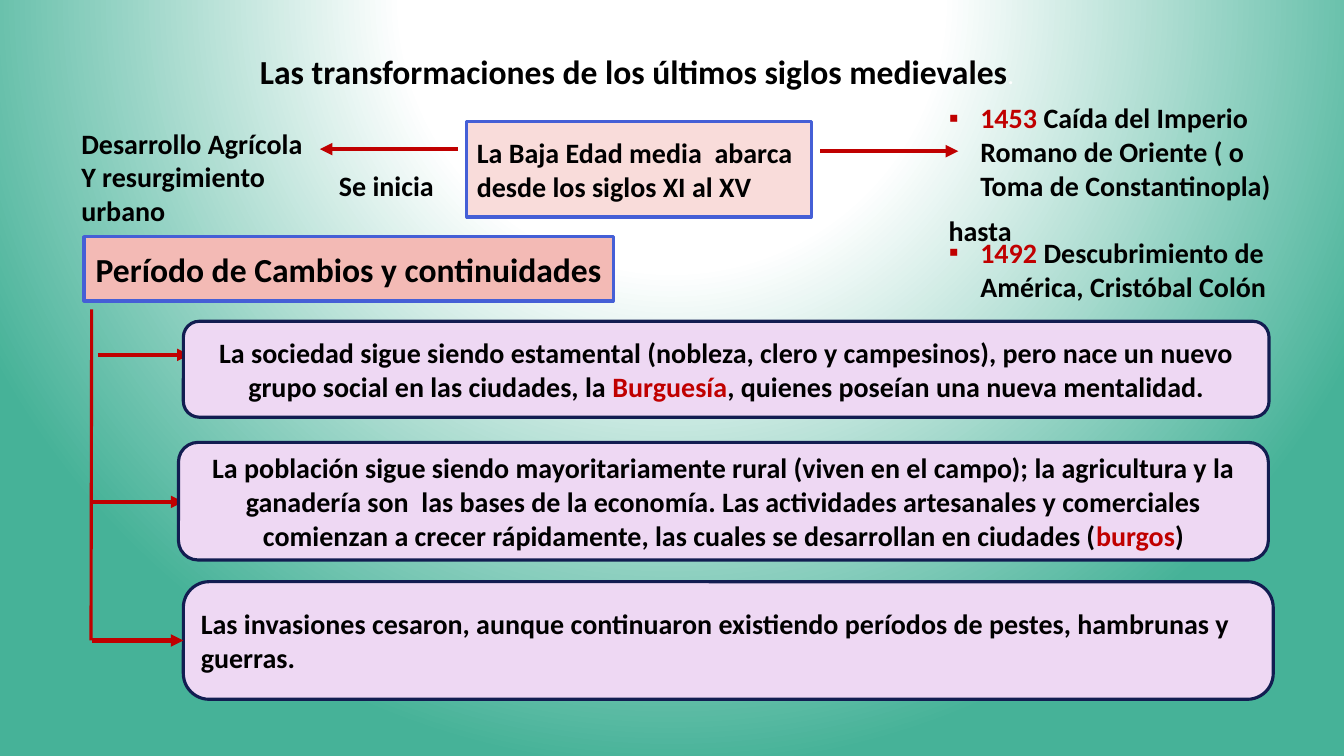
from lxml.etree import SubElement
from pptx import Presentation
from pptx.dml.color import RGBColor
from pptx.enum.shapes import MSO_CONNECTOR, MSO_SHAPE
from pptx.enum.text import MSO_ANCHOR, MSO_AUTO_SIZE, PP_ALIGN
from pptx.oxml.ns import qn
from pptx.util import Pt

BLACK, RED, WHITE = "000000", "C00000", "FFFFFF"
BLUE, NAVY, LILAC = "455FD6", "121D51", "EED8F3"


def colour(value):
    return RGBColor.from_string(value)


def add_span(para, text, ink=BLACK, size=20, bold=True):
    span = para.add_run()
    span.text = text
    span.font.name = "Calibri"
    span.font.size = Pt(size)
    span.font.bold = bold
    span.font.color.rgb = colour(ink)


def place(shape, left, top, width, height):
    shape.left, shape.top = Pt(left), Pt(top)
    shape.width, shape.height = Pt(width), Pt(height)


def paint_background(page):
    """Circular gradient, white above the top edge and green at the corners."""
    fill = page.background.fill
    fill.gradient()
    gradient = page.background._cSld.find(".//" + qn("a:gradFill"))
    for child in list(gradient):
        gradient.remove(child)
    stops = SubElement(gradient, qn("a:gsLst"))
    for position, value in ((0, WHITE), (35000, WHITE), (100000, "46B298")):
        stop = SubElement(stops, qn("a:gs"), pos=str(position))
        SubElement(stop, qn("a:srgbClr"), val=value)
    route = SubElement(gradient, qn("a:path"), path="circle")
    SubElement(route, qn("a:fillToRect"), l="50000", t="-80000", r="50000", b="180000")


def add_title(page, left, top, width, height):
    title = page.shapes.title
    place(title, left, top, width, height)
    frame = title.text_frame
    frame.auto_size = MSO_AUTO_SIZE.NONE
    frame.vertical_anchor = MSO_ANCHOR.TOP
    para = frame.paragraphs[0]
    para.alignment = PP_ALIGN.LEFT
    add_span(para, "Las transformaciones de los últimos siglos medievales", size=24)
    add_span(para, ".", WHITE, 18, False)


def add_dates(page, left, top, width, height):
    """Bulleted end dates, with the word that links them to the period."""
    body = page.placeholders[1]
    place(body, left, top, width, height)
    frame = body.text_frame
    frame.auto_size = MSO_AUTO_SIZE.NONE
    dates = (("1453 ", "Caída del Imperio Romano de Oriente ( o Toma de Constantinopla)"),
             ("1492 ", "Descubrimiento de América, Cristóbal Colón"))
    for index, (year, event) in enumerate(dates):
        para = frame.add_paragraph() if index else frame.paragraphs[0]
        para.space_before = Pt(24 * index)
        properties = para._p.get_or_add_pPr()
        properties.set("marL", str(Pt(22.5)))
        properties.set("indent", str(-Pt(22.5)))
        SubElement(properties, qn("a:buChar"), char="▪")
        add_span(para, year, RED)
        add_span(para, event)
    add_label(page, left, top + 80.5, 73.5, 31.5, ["hasta"])


def add_label(page, left, top, width, height, lines):
    label = page.shapes.add_textbox(Pt(left), Pt(top), Pt(width), Pt(height))
    frame = label.text_frame
    frame.word_wrap = True
    for index, line in enumerate(lines):
        add_span(frame.add_paragraph() if index else frame.paragraphs[0], line)


def add_panel(page, left, top, width, height, spans, fill=LILAC, edge=NAVY,
              preset=MSO_SHAPE.ROUNDED_RECTANGLE, size=20, align=PP_ALIGN.CENTER):
    panel = page.shapes.add_shape(preset, Pt(left), Pt(top), Pt(width), Pt(height))
    panel.shadow.inherit = False
    panel.fill.solid()
    panel.fill.fore_color.rgb = colour(fill)
    panel.line.color.rgb = colour(edge)
    panel.line.width = Pt(2.25)
    frame = panel.text_frame
    frame.word_wrap = True
    frame.vertical_anchor = MSO_ANCHOR.MIDDLE
    para = frame.paragraphs[0]
    para.alignment = align
    for text, ink in spans:
        add_span(para, text, ink, size)
    return panel


def add_line(page, start, end, weight=3, arrow=True):
    line = page.shapes.add_connector(MSO_CONNECTOR.STRAIGHT, *map(Pt, start + end))
    line.line.color.rgb = colour(RED)
    line.line.width = Pt(weight)
    if arrow:
        SubElement(line.line._get_or_add_ln(), qn("a:tailEnd"), type="triangle")
    SubElement(line._element.spPr, qn("a:effectLst"))
    return line


def add_period(page, left, top, width, height):
    """The period box with its start on the left and an arrow to its end dates."""
    add_panel(page, left, top, width, height,
              [("La Baja Edad media  abarca desde los siglos XI al XV", BLACK)],
              "F9DCDA", BLUE, MSO_SHAPE.RECTANGLE, align=PP_ALIGN.LEFT)
    right = left + width
    add_line(page, (right + 6.5, top + 21.5), (right + 105, top + 21.5))
    add_line(page, (left - 6.5, top + 20), (left - 105, top + 20))
    add_label(page, left - 98.5, top + 30.5, 92, 31.5, ["Se inicia"])
    add_label(page, left - 282.5, top, 177, 80,
              ["Desarrollo Agrícola", "Y resurgimiento urbano"])


def add_changes(page, left, top):
    """Heading box and the three statements that branch from its trunk."""
    add_panel(page, left, top, 378, 46, [("Período de Cambios y continuidades", BLACK)],
              "F3BAB5", BLUE, MSO_SHAPE.RECTANGLE, 24)
    trunk, edge = left + 5.5, left + 71
    add_line(page, (trunk, top + 52), (trunk - 0.5, top + 288.5), 2.25, False)
    add_line(page, (trunk + 4.5, top + 84.5), (edge + 4.5, top + 84.5))
    add_line(page, (trunk, top + 189.5), (edge, top + 189.5))
    add_panel(page, edge, top + 60.5, 775.5, 68.5, [
        ("La sociedad sigue siendo estamental (nobleza, clero y campesinos), pero nace "
         "un nuevo grupo social en las ciudades, la ", BLACK),
        ("Burguesía", RED), (", quienes poseían una nueva mentalidad.", BLACK)])
    add_panel(page, edge - 3.5, top + 147, 778.5, 84, [
        ("La población sigue siendo mayoritariamente rural (viven en el campo); la "
         "agricultura y la ganadería son  las bases de la economía. Las actividades "
         "artesanales y comerciales comienzan a crecer rápidamente, las cuales se "
         "desarrollan en ciudades (", BLACK),
        ("burgos", RED), (")", BLACK)])
    invasions = add_panel(page, edge, top + 246.5, 778.5, 84, [
        ("Las invasiones cesaron, aunque continuaron existiendo períodos de pestes, "
         "hambrunas y guerras.", BLACK)], align=PP_ALIGN.LEFT)
    invasions.adjustments[0] = 0.22
    branch = add_line(page, (trunk, top + 288.5), (edge, top + 288.5))
    branch.end_connect(invasions, 1)


def main():
    deck = Presentation()
    deck.slide_width, deck.slide_height = Pt(960), Pt(540)
    page = deck.slides.add_slide(deck.slide_layouts[1])
    paint_background(page)
    add_title(page, 178.5, 32.5, 613, 36)
    add_period(page, 333.5, 86.5, 246, 68.5)
    add_dates(page, 670.5, 68.5, 253.5, 152.5)
    add_changes(page, 60, 169)
    deck.save("out.pptx")


if __name__ == "__main__":
    main()
